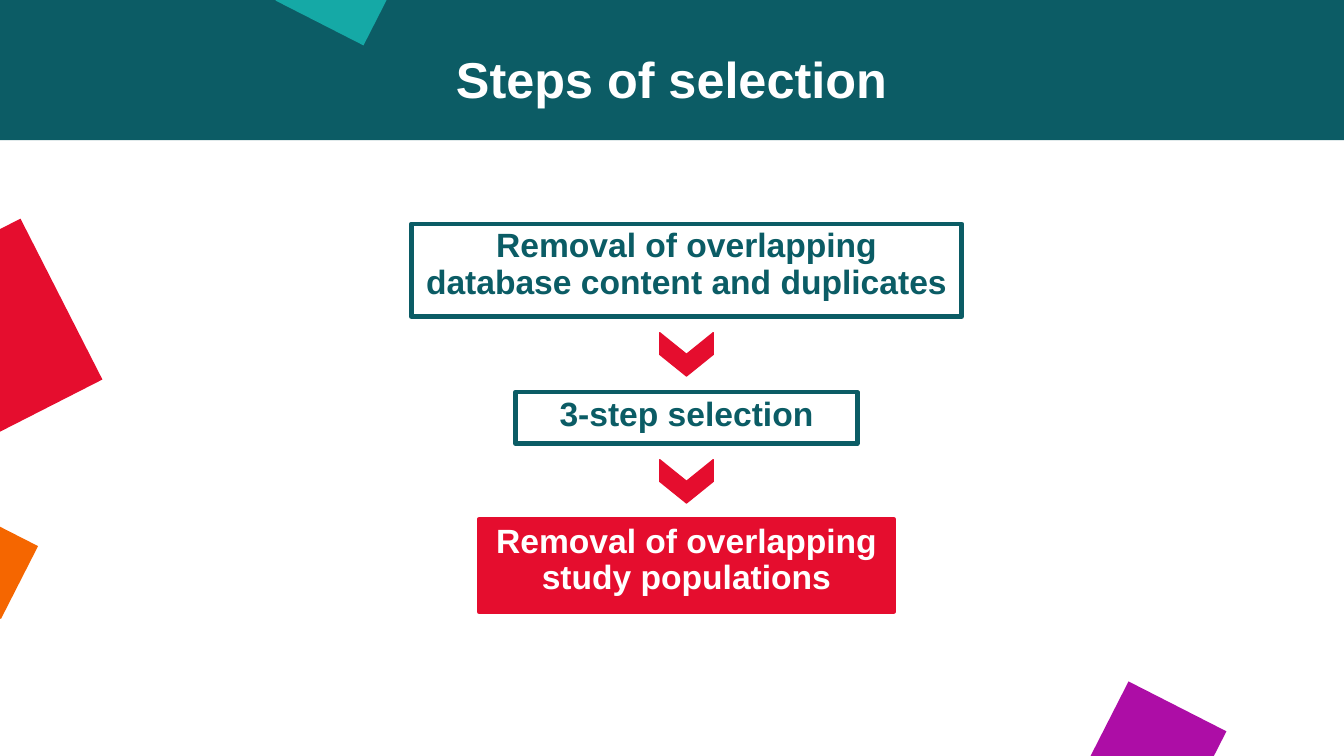
from pptx import Presentation
from pptx.dml.color import RGBColor
from pptx.enum.shapes import MSO_SHAPE as Preset
from pptx.enum.text import MSO_ANCHOR as Anchor, MSO_AUTO_SIZE as AutoSize, PP_ALIGN as Align
from pptx.util import Cm, Pt

TEAL = "0B5C65"
RED = "E50D2E"
WHITE = "FFFFFF"

SLIDE_WIDTH, SLIDE_HEIGHT = 33.87, 19.05
FLOW_CENTER, FLOW_TOP, STEP_GAP = 17.3, 5.64, 1.9
CHEVRON_WIDTH, CHEVRON_HEIGHT = 1.09, 1.35

DECORATIONS = [
    (-2.77, 6.3, 4.57, 4.55, 333, RED),
    (27.66, 17.65, 2.77, 2.77, 27, "AD0DA6"),
    (-1.55, 13.16, 2.16, 2.06, 27, "F56600"),
    (7.39, -1.85, 2.49, 2.57, 27, "15A9A6"),
]

STEPS = [
    ("Removal of overlapping database content and duplicates", 13.87, 2.34, WHITE, TEAL, TEAL),
    ("3-step selection", 8.61, 1.3, WHITE, TEAL, TEAL),
    ("Removal of overlapping study populations", 10.44, 2.34, RED, RED, WHITE),
]


def color(value):
    return RGBColor.from_string(value)


def add_block(slide, preset, left, top, width, height, fill, line=None, line_width=1, rotation=0):
    shape = slide.shapes.add_shape(preset, Cm(left), Cm(top), Cm(width), Cm(height))
    shape.shadow.inherit = False
    shape.rotation = rotation
    shape.fill.solid()
    shape.fill.fore_color.rgb = color(fill)
    if line:
        shape.line.color.rgb = color(line)
        shape.line.width = Pt(line_width)
    else:
        shape.line.fill.background()
    return shape


def write_text(shape, text, size, text_color):
    frame = shape.text_frame
    frame.text = text
    frame.word_wrap = True
    frame.auto_size = AutoSize.NONE
    frame.vertical_anchor = Anchor.TOP
    paragraph = frame.paragraphs[0]
    paragraph.alignment = Align.CENTER
    paragraph.line_spacing = 0.9
    paragraph.space_before = Pt(0)
    for run in paragraph.runs:
        run.font.name = "Arial"
        run.font.size = Pt(size)
        run.font.bold = True
        run.font.color.rgb = color(text_color)


def add_backdrop(slide):
    add_block(slide, Preset.RECTANGLE, 0, 0, SLIDE_WIDTH, 3.53, "0C5C65")
    for left, top, width, height, rotation, fill in DECORATIONS:
        add_block(slide, Preset.RECTANGLE, left, top, width, height, fill, rotation=rotation)


def place_title(slide, text):
    title = slide.shapes.title
    title.left, title.top, title.width, title.height = Cm(6.88), Cm(1.27), Cm(20.09), Cm(1.78)
    write_text(title, text, 36, WHITE)
    slide.shapes._spTree.append(title._element)


def add_chevron(slide, center_y):
    add_block(slide, Preset.CHEVRON, FLOW_CENTER - CHEVRON_WIDTH / 2, center_y - CHEVRON_HEIGHT / 2,
              CHEVRON_WIDTH, CHEVRON_HEIGHT, RED, RED, rotation=90)


def add_flow(slide):
    top = FLOW_TOP
    for index, (text, width, height, fill, line, text_color) in enumerate(STEPS):
        if index:
            add_chevron(slide, top - STEP_GAP / 2)
        box = add_block(slide, Preset.RECTANGLE, FLOW_CENTER - width / 2, top, width, height, fill, line, 3.25)
        write_text(box, text, 24, text_color)
        top += height + STEP_GAP


def main():
    presentation = Presentation()
    presentation.slide_width = Cm(SLIDE_WIDTH)
    presentation.slide_height = Cm(SLIDE_HEIGHT)
    slide = presentation.slides.add_slide(presentation.slide_layouts.get_by_name("Title Only"))
    add_backdrop(slide)
    place_title(slide, "Steps of selection")
    add_flow(slide)
    presentation.save("out.pptx")


if __name__ == "__main__":
    main()
